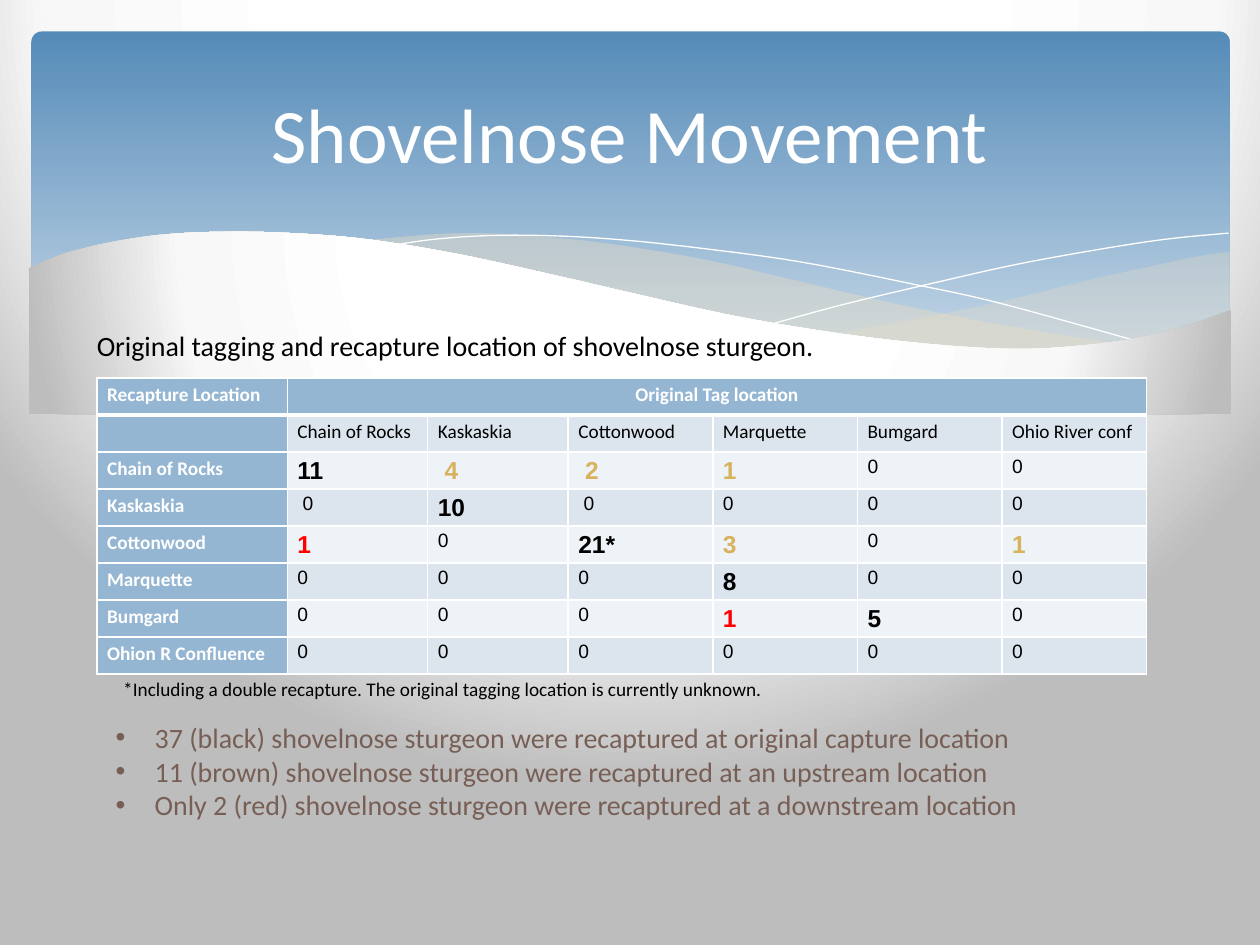
from pptx import Presentation
from pptx.dml.color import RGBColor
from pptx.enum.shapes import MSO_SHAPE
from pptx.enum.text import MSO_ANCHOR, PP_ALIGN
from pptx.oxml import parse_xml
from pptx.oxml.ns import nsdecls
from pptx.util import Inches, Pt

ROUNDED = MSO_SHAPE.ROUNDED_RECTANGLE
LEFT, CENTER = PP_ALIGN.LEFT, PP_ALIGN.CENTER
TOP, MIDDLE = MSO_ANCHOR.TOP, MSO_ANCHOR.MIDDLE

THEME = {
    "white": "FFFFFF", "black": "000000", "red": "FF0000", "gold": "D8B25C", "brown": "775F55",
    "header": "94B6D2", "bands": ("DCE5EE", "EEF3F7"), "sand": "EBDDC3",
    "banner": ((0, "558BB8"), (0.9, "BFD3E4")),
    "glow": ((40, "FFFFFF"), (74, "F8F8F8"), (100, "BDBDBD")),
    "text": "Calibri", "figures": "Arial",
    "title": 44, "body": 16, "count": 14, "small": 11,
}

presentation = Presentation()
presentation.slide_width, presentation.slide_height = Inches(10), Inches(7.5)
slide = presentation.slides.add_slide(presentation.slide_layouts[6])
# All lengths below are counted in columns and rows of this 100 by 75 grid.
COLUMN = presentation.slide_width // 100
ROW = presentation.slide_height // 75


def smooth_curve(knots, steps=6):
    """Return points of a Catmull-Rom spline through the knots, in EMU."""
    padded = [knots[0], *knots, knots[-1]]
    points = [knots[0]]
    for a, b, c, d in zip(padded, padded[1:], padded[2:], padded[3:]):
        for step in range(1, steps + 1):
            t = step / steps
            points.append([
                b[i] + t * (c[i] - a[i]) / 2
                + t ** 2 * (2 * a[i] - 5 * b[i] + 4 * c[i] - d[i]) / 2
                + t ** 3 * (3 * b[i] - a[i] - 3 * c[i] + d[i]) / 2
                for i in (0, 1)])
    return [(x * COLUMN, y * ROW) for x, y in points]


def write_text(paragraph, text, size, color, bold=False, font=THEME["text"], align=LEFT):
    paragraph.alignment = align
    run = paragraph.add_run()
    run.text = text
    formats = {"size": Pt(size), "bold": bold, "name": font}
    for name, value in formats.items():
        setattr(run.font, name, value)
    run.font.color.rgb = RGBColor.from_string(color)


# Banner
banner = slide.shapes.add_shape(ROUNDED, 2.5 * COLUMN, 2.5 * ROW, 95.1 * COLUMN, 27 * ROW)
banner.adjustments[0] = 0.03
banner.shadow.inherit = False
banner.line.fill.background()
banner.fill.gradient()
banner.fill.gradient_angle = 270
for stop, (position, color) in zip(banner.fill.gradient_stops, THEME["banner"]):
    stop.position = position
    stop.color.rgb = RGBColor.from_string(color)

# Waves: curves, fill and opacity; a wave without fill is a thin line
waves = [
    ([[(97.6, 20), (94.8, 20.4), (90.6, 21.3), (86.1, 22.3), (80.5, 23.7), (75.3, 24.8),
       (70.6, 25.7), (66.1, 26.5)],
      [(66.1, 26.5), (70.5, 27.1), (74.5, 27.5), (78.1, 27.7), (82.4, 27.7), (86.3, 27.5),
       (89.7, 27), (92.8, 26.3), (97.6, 24.7)]], THEME["sand"], 29),
    ([[(89.3, 27.3), (83.7, 26.5), (77.5, 25.4), (70.6, 24), (62.9, 22.2), (56.9, 20.8),
       (51.4, 19.8), (46.5, 19.1), (42, 18.7), (38, 18.5), (34.4, 18.6), (28.6, 19.1)],
      [(28.6, 19.1), (34.2, 19.9), (40.4, 21.1), (44.9, 22.2), (53, 24), (60.1, 25.5),
       (66.5, 26.6), (72.2, 27.4), (77.3, 27.7), (81.8, 27.8), (85.7, 27.7), (89.3, 27.3)]],
     THEME["sand"], 40),
    ([[(30.9, 19.5), (34.4, 19), (38.7, 18.7), (43.3, 18.7), (48.9, 19), (55.6, 19.7),
       (63.6, 20.8), (72.7, 22.6), (79.5, 24.1), (90.7, 27.2)]], None, 100),
    ([[(61.3, 25.7), (67.2, 24.1), (74.8, 22.3), (80.6, 21), (86.6, 19.9), (92.4, 19),
       (97.5, 18.5)]], None, 100),
    ([[(97.7, 24.6), (94, 25.9), (89.9, 26.9), (85, 27.5), (80.9, 27.7), (76.1, 27.5),
       (70.8, 27), (64.8, 26.2), (57.9, 25), (50.3, 23.3), (44.7, 22), (36.5, 20.2),
       (29.2, 19), (23, 18.5), (17.7, 18.4), (13.2, 18.6), (9.5, 19.1), (6.7, 19.7),
       (4.6, 20.3), (2.3, 21.3)],
      [(2.3, 32.9), (97.7, 32.9)]], THEME["white"], 100),
]
for curves, color, opacity in waves:
    points = [point for curve in curves for point in smooth_curve(curve)]
    builder = slide.shapes.build_freeform(*points[0])
    builder.add_line_segments(points[1:], close=color is not None)
    wave = builder.convert_to_shape()
    wave.shadow.inherit = False
    if color is None:
        wave.fill.background()
        wave.line.width = 0
        wave.line.color.rgb = RGBColor.from_string(THEME["white"])
        continue
    wave.line.fill.background()
    wave.fill.solid()
    wave.fill.fore_color.rgb = RGBColor.from_string(color)
    if opacity < 100:
        tint = wave._element.xpath("./p:spPr/a:solidFill/a:srgbClr")[0]
        tint.append(parse_xml(f'<a:alpha {nsdecls("a")} val="{opacity * 1000}"/>'))

# The slide and the front wave share one radial glow
front_wave = wave
slide.background.fill.gradient()
front_wave.fill.gradient()
stops = "".join(f'<a:gs pos="{position * 1000}"><a:srgbClr val="{color}"/></a:gs>'
                for position, color in THEME["glow"])
for element, query in ((slide._element, ".//p:bgPr/a:gradFill"),
                       (front_wave._element, "./p:spPr/a:gradFill")):
    gradient = element.xpath(query)[0]
    gradient.getparent().replace(gradient, parse_xml(
        f'<a:gradFill {nsdecls("a")} rotWithShape="1"><a:gsLst>{stops}</a:gsLst>'
        '<a:path path="circle"><a:fillToRect l="20000" t="-40000" r="20000" b="140000"/>'
        '</a:path></a:gradFill>'))

# Table of recaptures
sites = ["Chain of Rocks", "Kaskaskia", "Cottonwood", "Marquette", "Bumgard"]
rows = [
    ["Recapture Location", "Original Tag location", "", "", "", "", ""],
    ["", *sites, "Ohio River conf"],
    [sites[0], "11", " 4", " 2", "1", "0", "0"],
    [sites[1], " 0", "10", " 0", "0", "0", "0"],
    [sites[2], "1", "0", "21*", "3", "0", "1"],
    [sites[3], "0", "0", "0", "8", "0", "0"],
    [sites[4], "0", "0", "0", "1", "5", "0"],
    ["Ohion R Confluence", "0", "0", "0", "0", "0", "0"],
]
column_widths = [15.1, 11.15, 11.15, 11.48, 11.48, 11.48, 11.48]
row_height = 2.94
table = slide.shapes.add_table(len(rows), len(column_widths), int(7.7 * COLUMN), 30 * ROW,
                               int(sum(column_widths) * COLUMN),
                               int(len(rows) * row_height * ROW)).table
for column, width in zip(table.columns, column_widths):
    column.width = int(width * COLUMN)
for row in table.rows:
    row.height = int(row_height * ROW)
table.cell(0, 1).merge(table.cell(0, 6))

cell_margins = {"margin_left": 0.8 * COLUMN, "margin_right": 0.8 * COLUMN,
                "margin_top": 0.1 * ROW, "margin_bottom": 0.2 * ROW}
for r, values in enumerate(rows):
    for c, value in enumerate(values):
        cell = table.cell(r, c)
        for name, length in cell_margins.items():
            setattr(cell, name, int(length))
        is_header = r == 0 or c == 0
        cell.fill.solid()
        cell.fill.fore_color.rgb = RGBColor.from_string(
            THEME["header"] if is_header else THEME["bands"][(r + 1) % 2])
        borders = {"L": 1, "R": 1, "T": 3 if r == 1 else 1, "B": 3 if r == 0 else 1}
        for index, (side, points) in enumerate(borders.items()):
            cell._tc.get_or_add_tcPr().insert(index, parse_xml(
                f'<a:ln{side} {nsdecls("a")} w="{Pt(points)}"><a:solidFill>'
                f'<a:srgbClr val="{THEME["white"]}"/></a:solidFill></a:ln{side}>'))
        paragraph = cell.text_frame.paragraphs[0]
        paragraph.line_spacing = 1.15
        if not value:
            paragraph._p.get_or_add_endParaRPr().set("sz", str(THEME["small"] * 100))
        elif is_header:
            write_text(paragraph, value, THEME["small"], THEME["white"], True,
                       align=CENTER if c == 1 else LEFT)
        elif r == 1:
            write_text(paragraph, value, THEME["small"], THEME["black"])
        elif value.strip() == "0":
            write_text(paragraph, value, THEME["small"], THEME["black"], font=THEME["figures"])
        else:
            # Same site is black, upstream gold, downstream red
            site_shift = c - (r - 1)
            color = "gold" if site_shift > 0 else "red" if site_shift < 0 else "black"
            write_text(paragraph, value, THEME["count"], THEME[color], True, THEME["figures"])

# Texts: place, size, colour, alignment, anchor, bulleted, lines
texts = [
    ((5, 3.7, 90, 13.7), "title", "white", CENTER, MIDDLE, False, ["Shovelnose Movement"]),
    ((6.7, 25.6, 84.3, 3.7), "body", "black", LEFT, TOP, False,
     ["Original tagging and recapture location of shovelnose sturgeon."]),
    ((8.8, 53.3, 58.3, 4.7), "small", "black", LEFT, TOP, False,
     ["*Including a double recapture. The original tagging location is currently unknown."]),
    ((8.2, 56.7, 84.3, 9.1), "body", "brown", LEFT, TOP, True,
     ["37 (black) shovelnose sturgeon were recaptured at original capture location",
      "11 (brown) shovelnose sturgeon were recaptured at an upstream location",
      "Only 2 (red) shovelnose sturgeon were recaptured at a downstream location"]),
]
for (x, y, width, height), size, color, align, anchor, bulleted, lines in texts:
    box = slide.shapes.add_textbox(x * COLUMN, y * ROW, width * COLUMN, height * ROW)
    frame = box.text_frame
    frame.word_wrap, frame.vertical_anchor = True, anchor
    for index, line in enumerate(lines):
        paragraph = frame.add_paragraph() if index else frame.paragraphs[0]
        write_text(paragraph, line, THEME[size], THEME[color], align=align)
        if bulleted:
            properties = paragraph._p.get_or_add_pPr()
            properties.set("marL", str(int(3.1 * COLUMN)))
            properties.set("indent", str(int(-3.1 * COLUMN)))
            properties.append(parse_xml(f'<a:buFont {nsdecls("a")} typeface="Arial"/>'))
            properties.append(parse_xml(f'<a:buChar {nsdecls("a")} char="•"/>'))

presentation.save("out.pptx")
